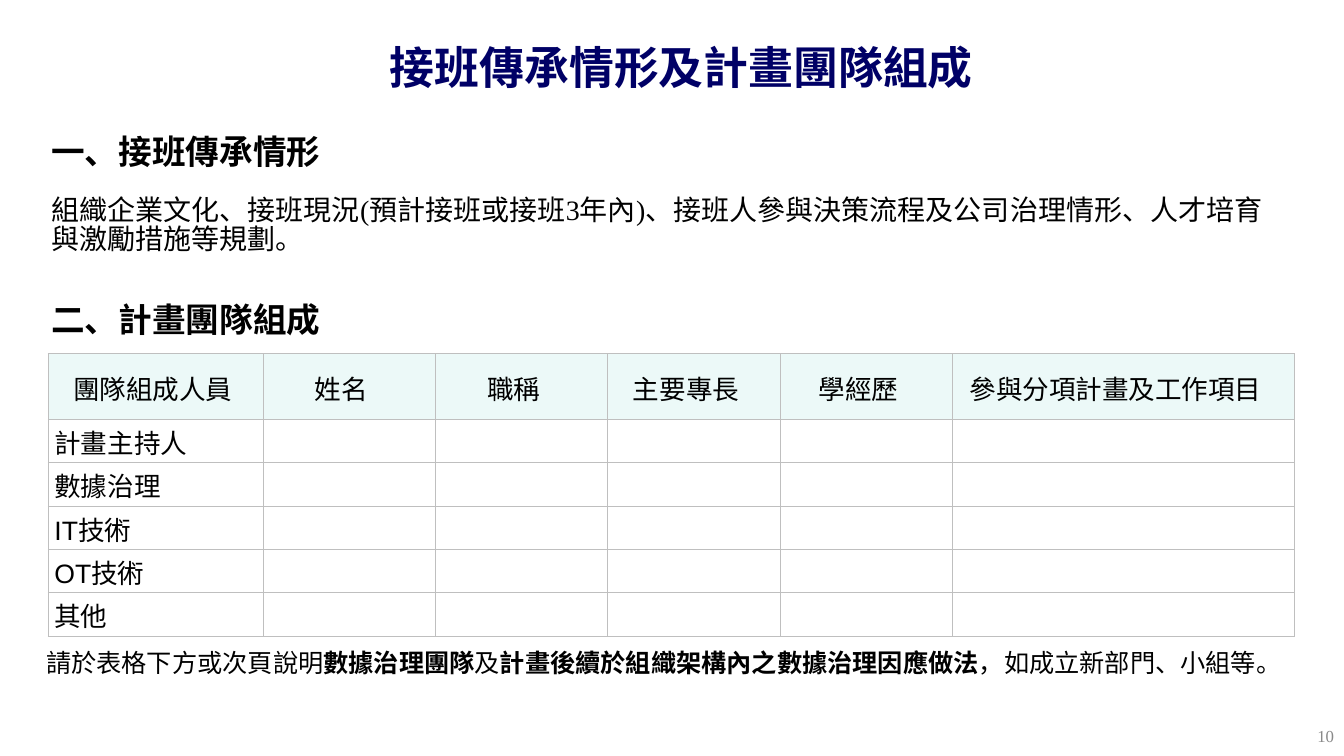
from lxml import etree
from pptx import Presentation
from pptx.dml.color import RGBColor
from pptx.enum.text import MSO_ANCHOR, MSO_AUTO_SIZE, PP_ALIGN
from pptx.oxml.ns import qn
from pptx.util import Inches, Pt

LEFT, CENTER, RIGHT = PP_ALIGN.LEFT, PP_ALIGN.CENTER, PP_ALIGN.RIGHT
TOP, MIDDLE = MSO_ANCHOR.TOP, MSO_ANCHOR.MIDDLE
NO_AUTOFIT = MSO_AUTO_SIZE.NONE

NAVY = RGBColor(0x00, 0x00, 0x66)
BLACK = RGBColor(0x00, 0x00, 0x00)
WHITE = RGBColor(0xFF, 0xFF, 0xFF)
GRAY = RGBColor(0x89, 0x89, 0x89)
HEADER_FILL = RGBColor(0xEC, 0xF9, 0xF8)
BORDER = RGBColor(0xBF, 0xBF, 0xBF)

SERIF, SANS, CJK = "Times New Roman", "Arial", "Noto Sans CJK SC"

# Text, bold, font, size, line spacing, space before
BODY = [
    ("一、接班傳承情形", True, SANS, 24, 18, 0),
    ("組織企業文化、接班現況(預計接班或接班3年內)、接班人參與決策流程及公司治理情形、"
     "人才培育與激勵措施等規劃。", False, SERIF, 20, 21, 12),
    ("二、計畫團隊組成", True, SANS, 24, 18, 36),
]
HEADERS = ["團隊組成人員", "姓名", "職稱", "主要專長", "學經歷", "參與分項計畫及工作項目"]
MEMBERS = ["計畫主持人", "數據治理", "IT技術", "OT技術", "其他"]
COLUMN_WIDTHS = [2.13] + [1.71] * 4 + [3.39]
HEADER_HEIGHT, ROW_HEIGHT = 0.65, 0.43
NOTE = [
    ("請於表格下方或次頁說明", False),
    ("數據治理團隊", True),
    ("及", False),
    ("計畫後續於組織架構內之數據治理因應做法", True),
    ("，如成立新部門、小組等。", False),
]


def style_font(font, name, size, color, bold=False):
    font.name, font.size, font.bold = name, Pt(size), bold
    font.color.rgb = color


def place(shape, left, top, width, height, anchor=TOP):
    shape.left, shape.top = Inches(left), Inches(top)
    shape.width, shape.height = Inches(width), Inches(height)
    frame = shape.text_frame
    frame.word_wrap = True
    frame.auto_size = NO_AUTOFIT
    frame.vertical_anchor = anchor
    return frame


def add_text_box(slide, left, top, width, height, anchor=TOP):
    size = [Inches(length) for length in (left, top, width, height)]
    box = slide.shapes.add_textbox(*size)
    return place(box, left, top, width, height, anchor)


def remove_bullet(para):
    properties = para._p.get_or_add_pPr()
    properties.set("marL", "0")
    properties.set("indent", "0")
    etree.SubElement(properties, qn("a:buNone"))


def add_title(slide):
    frame = place(slide.shapes.title, 2.55, 0.21, 8.42, 0.91, MIDDLE)
    para = frame.paragraphs[0]
    para.text = "接班傳承情形及計畫團隊組成"
    para.alignment = CENTER
    style_font(para.font, SERIF, 32, NAVY, True)


def add_body(slide):
    frame = place(slide.placeholders[1], 0.41, 1.4, 12.36, 2.05)
    for index, (text, bold, name, size, spacing, before) in enumerate(BODY):
        para = frame.add_paragraph() if index else frame.paragraphs[0]
        remove_bullet(para)
        para.text = text
        para.line_spacing = Pt(spacing)
        para.space_before, para.space_after = Pt(before), Pt(6)
        style_font(para.font, name, size, BLACK, bold)


def add_borders(cell):
    properties = cell._tc.get_or_add_tcPr()
    for index, side in enumerate(("lnL", "lnR", "lnT", "lnB")):
        line = etree.Element(qn(f"a:{side}"), w=str(Pt(0.75)))
        fill = etree.SubElement(line, qn("a:solidFill"))
        etree.SubElement(fill, qn("a:srgbClr"), val=str(BORDER))
        properties.insert(index, line)


def fill_cell(cell, text, fill, alignment, left, right):
    cell.fill.solid()
    cell.fill.fore_color.rgb = fill
    cell.vertical_anchor = MIDDLE
    cell.margin_left, cell.margin_right = Inches(left), Inches(right)
    cell.margin_top, cell.margin_bottom = Inches(0.02), Inches(0)
    add_borders(cell)
    para = cell.text_frame.paragraphs[0]
    para.text = text
    para.alignment = alignment
    style_font(para.font, SANS, 19, BLACK)


def add_team_table(slide):
    row_heights = [HEADER_HEIGHT] + [ROW_HEIGHT] * len(MEMBERS)
    table = slide.shapes.add_table(
        len(row_heights), len(HEADERS), Inches(0.48), Inches(3.51),
        Inches(sum(COLUMN_WIDTHS)), Inches(sum(row_heights))).table
    for column, width in zip(table.columns, COLUMN_WIDTHS):
        column.width = Inches(width)
    for row, height in zip(table.rows, row_heights):
        row.height = Inches(height)
    # Header row: labels sit slightly left of centre
    for index, header in enumerate(HEADERS):
        right = 0.19 if index else 0.09
        fill_cell(table.cell(0, index), header, HEADER_FILL, CENTER, 0.03, right)
    # Member rows: only the first column has text
    for row, member in enumerate(MEMBERS, 1):
        for index in range(len(HEADERS)):
            text = "" if index else member
            fill_cell(table.cell(row, index), text, WHITE, LEFT, 0.06, 0.03)


def add_note(slide):
    para = add_text_box(slide, 0.36, 6.37, 12.84, 0.4).paragraphs[0]
    for text, bold in NOTE:
        span = para.add_run()
        span.text = text
        style_font(span.font, CJK, 18, BLACK, bold)


def add_page_number(slide):
    para = add_text_box(slide, 10.22, 7.1, 3.11, 0.4, MIDDLE).paragraphs[0]
    para.text = "10"
    para.alignment = RIGHT
    style_font(para.font, SERIF, 12, GRAY)


def main():
    deck = Presentation()
    deck.slide_width, deck.slide_height = Inches(13.33), Inches(7.5)
    slide = deck.slides.add_slide(deck.slide_layouts[1])
    add_title(slide)
    add_page_number(slide)
    add_team_table(slide)
    add_body(slide)
    add_note(slide)
    deck.save("out.pptx")


if __name__ == "__main__":
    main()
